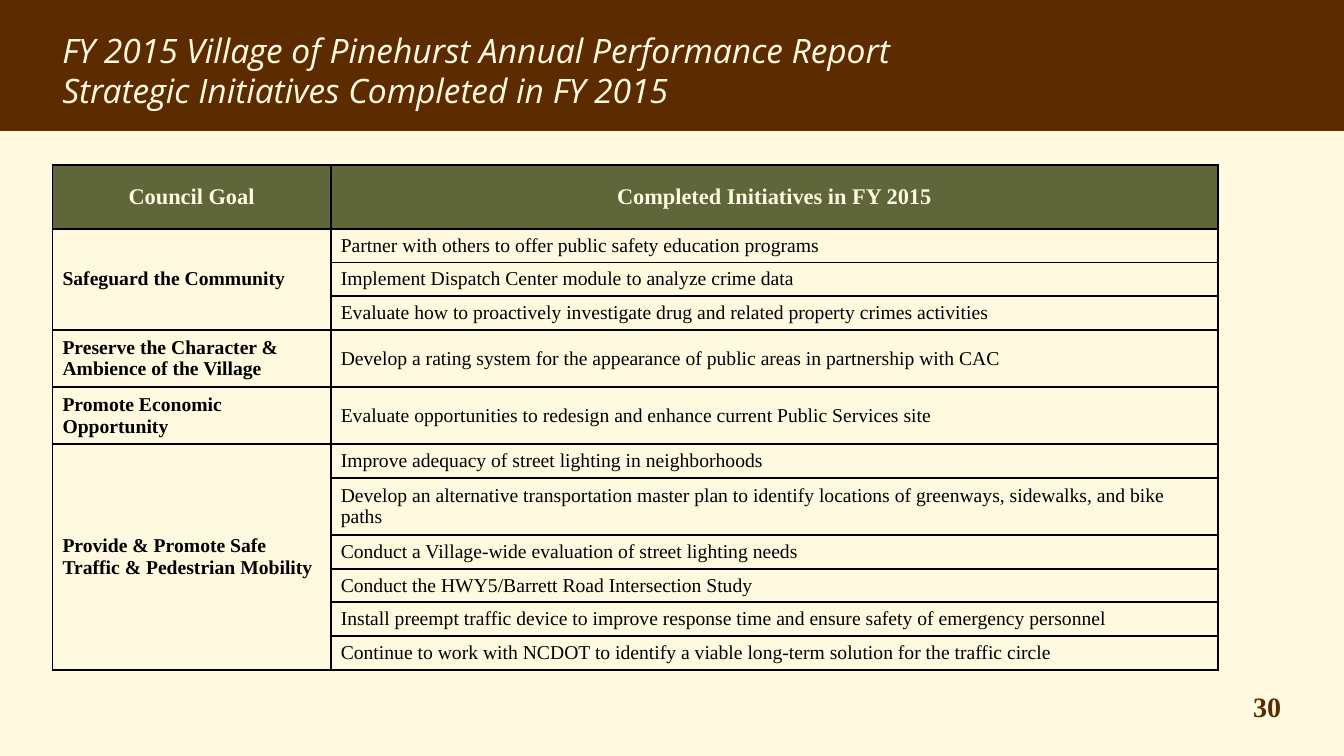
from lxml import etree
from pptx import Presentation
from pptx.dml.color import RGBColor as RGB
from pptx.enum.shapes import MSO_SHAPE as SHAPE
from pptx.enum.text import MSO_ANCHOR as ANCHOR, PP_ALIGN as ALIGN
from pptx.oxml.ns import qn
from pptx.util import Inches, Pt

CREAM = RGB(0xFF, 0xF9, 0xDF)
BROWN = RGB(0x5D, 0x2B, 0x00)
OLIVE = RGB(0x5E, 0x66, 0x3A)
BLACK = RGB(0x00, 0x00, 0x00)
SERIF = "Times New Roman"
SANS = "Open Sans"

TITLE = [
    "FY 2015 Village of Pinehurst Annual Performance Report",
    "Strategic Initiatives Completed in FY 2015",
]
HEADS = ["Council Goal", "Completed Initiatives in FY 2015"]
GOALS = [
    ("Safeguard the Community", [
        "Partner with others to offer public safety education programs",
        "Implement Dispatch Center module to analyze crime data",
        "Evaluate how to proactively investigate drug and related property crimes activities",
    ]),
    ("Preserve the Character & Ambience of the Village", [
        "Develop a rating system for the appearance of public areas in partnership with CAC",
    ]),
    ("Promote Economic Opportunity", [
        "Evaluate opportunities to redesign and enhance current Public Services site",
    ]),
    ("Provide & Promote Safe Traffic & Pedestrian Mobility", [
        "Improve adequacy of street lighting in neighborhoods",
        "Develop an alternative transportation master plan to identify locations of "
        "greenways, sidewalks, and bike paths",
        "Conduct a Village-wide evaluation of street lighting needs",
        "Conduct the HWY5/Barrett Road Intersection Study",
        "Install preempt traffic device to improve response time and ensure safety of "
        "emergency personnel",
        "Continue to work with NCDOT to identify a viable long-term solution for the "
        "traffic circle",
    ]),
]


def add_run(para, text, size, color, face=SERIF, bold=False, slant=False):
    """Add one styled run to a paragraph."""
    run = para.add_run()
    run.text = text
    font = run.font
    font.name, font.size = face, Pt(size)
    font.bold, font.italic = bold, slant
    font.color.rgb = color


def add_band(slide, left, top, width, height):
    """Draw the brown band with the two-line title."""
    band = slide.shapes.add_shape(
        SHAPE.RECTANGLE, Inches(left), Inches(top), Inches(width), Inches(height))
    band.shadow.inherit = False
    band.fill.solid()
    band.fill.fore_color.rgb = BROWN
    band.line.fill.background()
    box = slide.shapes.add_textbox(
        Inches(left + 0.52), Inches(top + 0.25), Inches(width - 1.04), Inches(0.91))
    frame = box.text_frame
    frame.word_wrap = True
    for i, line in enumerate(TITLE):
        para = frame.add_paragraph() if i else frame.paragraphs[0]
        para.line_spacing = Pt(28.6)
        add_run(para, line, 24, CREAM, SANS, slant=True)


def add_page(slide, left, top, width, height):
    """Place the page number."""
    box = slide.shapes.add_textbox(
        Inches(left), Inches(top), Inches(width), Inches(height))
    box.text_frame.word_wrap = True
    add_run(box.text_frame.paragraphs[0], "30", 20, BROWN, bold=True)


def set_edges(cell):
    """Give a cell black borders on all four sides."""
    props = cell._tc.get_or_add_tcPr()
    for i, side in enumerate(("a:lnL", "a:lnR", "a:lnT", "a:lnB")):
        line = etree.Element(qn(side), w=str(Pt(1.5)))
        fill = etree.SubElement(line, qn("a:solidFill"))
        etree.SubElement(fill, qn("a:srgbClr"), val=str(BLACK))
        props.insert(i, line)


def fill_cell(cell, text, size=14, color=BLACK, bold=False, align=ALIGN.LEFT):
    """Write the text of one cell."""
    cell.vertical_anchor = ANCHOR.MIDDLE
    para = cell.text_frame.paragraphs[0]
    para.alignment = align
    add_run(para, text, size, color, bold=bold)


def add_goals(slide, left, top, width, height):
    """Build the table of goals and completed initiatives."""
    count = 1 + sum(len(tasks) for _, tasks in GOALS)
    table = slide.shapes.add_table(
        count, 2, Inches(left), Inches(top), Inches(width), Inches(height)).table
    table.horz_banding = False
    table.columns[0].width = Inches(2.76)
    table.columns[1].width = Inches(width - 2.76)
    for i, row in enumerate(table.rows):
        row.height = Inches(0.24 if i else 0.63)
        for cell in row.cells:
            cell.fill.solid()
            cell.fill.fore_color.rgb = CREAM if i else OLIVE
            set_edges(cell)
    for col, head in enumerate(HEADS):
        fill_cell(table.cell(0, col), head, 16, CREAM, True, ALIGN.CENTER)
    first = 1
    for goal, tasks in GOALS:
        last = first + len(tasks) - 1
        if last > first:
            table.cell(first, 0).merge(table.cell(last, 0))
        fill_cell(table.cell(first, 0), goal, bold=True)
        for row, task in enumerate(tasks, first):
            fill_cell(table.cell(row, 1), task)
        first = last + 1


def main():
    """Build and save the slide."""
    deck = Presentation()
    deck.slide_width, deck.slide_height = Inches(13.33), Inches(7.5)
    slide = deck.slides.add_slide(deck.slide_layouts[6])
    slide.background.fill.solid()
    slide.background.fill.fore_color.rgb = CREAM
    add_band(slide, 0, 0, 13.33, 1.3)
    add_page(slide, 12.33, 6.79, 0.69, 0.44)
    add_goals(slide, 0.52, 1.64, 11.56, 4.76)
    deck.save("out.pptx")


if __name__ == "__main__":
    main()
